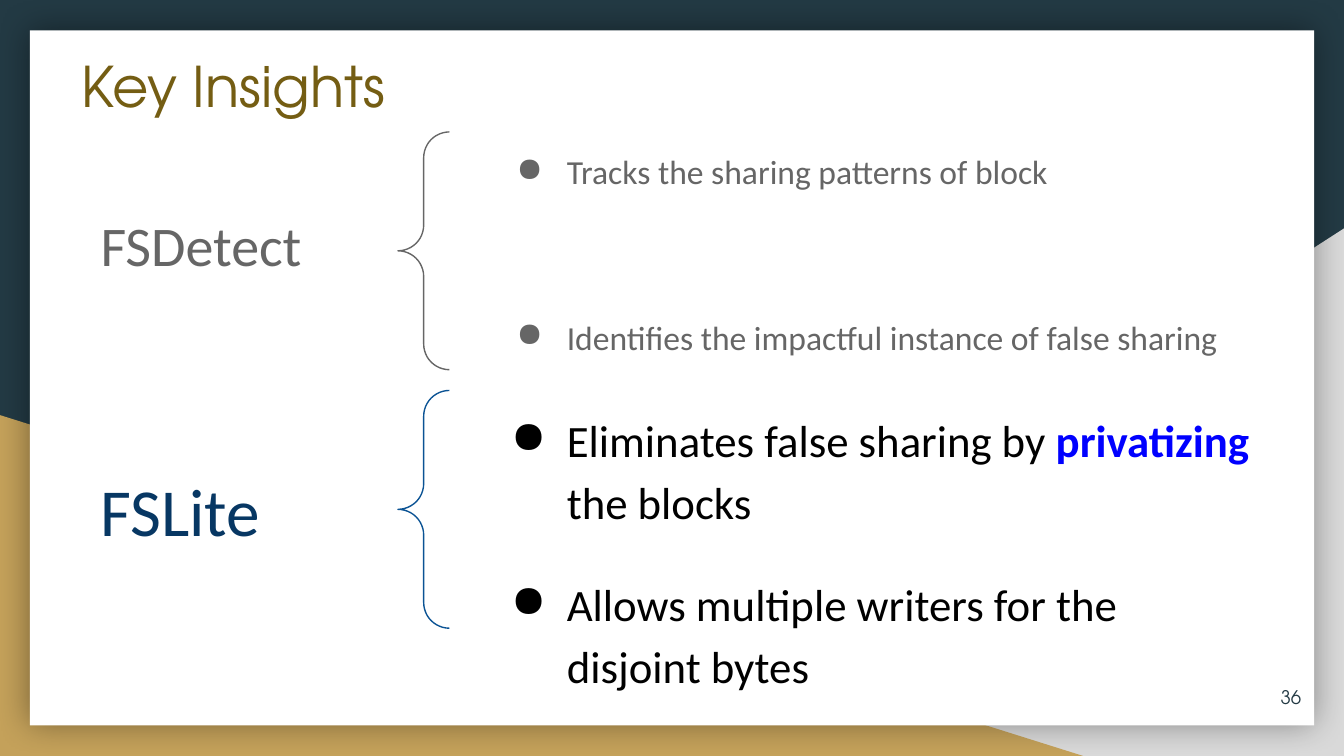
from dataclasses import dataclass

from lxml.etree import SubElement
from pptx import Presentation
from pptx.dml.color import RGBColor
from pptx.enum.shapes import MSO_SHAPE as Preset
from pptx.enum.text import MSO_ANCHOR as Anchor, PP_ALIGN as Align
from pptx.oxml.ns import qn
from pptx.util import Pt


@dataclass(frozen=True)
class Theme:
    """Colours, fonts and type sizes of the slide."""
    backdrop: str = "233A44"
    corner_grey: str = "D9D9D9"
    corner_gold: str = "C4A15A"
    panel: str = "FFFFFF"
    shadow: str = "000000"
    heading: str = "745D13"
    muted: str = "666666"
    ink: str = "000000"
    accent: str = "0000FF"
    lite: str = "073763"
    lite_brace: str = "0B5394"
    heading_font: str = "TeX Gyre Adventor"
    body_font: str = "Calibri"
    lite_size: int = 36
    heading_size: int = 30
    strong_size: int = 24
    muted_size: int = 18
    number_size: int = 10


THEME = Theme()


def rgb(color):
    """Turn a hex string into a colour."""
    return RGBColor.from_string(color)


def add_preset(slide, preset, box, fill=None, line=None):
    """Add a flat preset shape with an optional fill and outline."""
    shape = slide.shapes.add_shape(preset, *map(Pt, box))
    shape.shadow.inherit = False
    if fill:
        shape.fill.solid()
        shape.fill.fore_color.rgb = rgb(fill)
    else:
        shape.fill.background()
    if line:
        shape.line.color.rgb = rgb(line)
        shape.line.width = Pt(0.75)
    else:
        shape.line.fill.background()
    return shape


def add_glow_shadow(shape):
    """Give a shape a soft centred shadow."""
    effects = shape._element.spPr.find(qn("a:effectLst"))
    shadow = SubElement(effects, qn("a:outerShdw"), blurRad=str(Pt(18)),
                        dist="0", dir="0", algn="ctr", rotWithShape="0")
    color = SubElement(shadow, qn("a:srgbClr"), val=THEME.shadow)
    SubElement(color, qn("a:alpha"), val="40000")


def add_text(slide, box, runs, size, font=THEME.body_font):
    """Add a text box from (text, colour, bold) runs and return its frame."""
    frame = slide.shapes.add_textbox(*map(Pt, box)).text_frame
    frame.word_wrap = True
    frame.margin_left = frame.margin_right = Pt(7.2)
    frame.margin_top = frame.margin_bottom = Pt(7.2)
    for text, color, bold in runs:
        run = frame.paragraphs[0].add_run()
        run.text = text
        run.font.name = font
        run.font.size = Pt(size)
        run.font.bold = bold
        run.font.color.rgb = rgb(color)
    return frame


def add_bullet(slide, box, runs, size):
    """Add a one-paragraph bullet point with a hanging indent."""
    frame = add_text(slide, box, runs, size)
    paragraph = frame.paragraphs[0]
    paragraph.line_spacing = 1.15
    properties = paragraph._p.get_or_add_pPr()
    properties.set("marL", str(Pt(36)))
    properties.set("indent", str(-Pt(18 + size / 2)))
    bullet_color = SubElement(properties, qn("a:buClr"))
    SubElement(bullet_color, qn("a:srgbClr"), val=runs[0][1])
    SubElement(properties, qn("a:buChar"), char="●")
    return frame


def add_brace(slide, top, color):
    """Add the brace that joins a technique to its insights."""
    brace = add_preset(slide, Preset.LEFT_BRACE, (213.2, top, 27.6, 127.4), line=color)
    brace.adjustments[0] = 0.5
    brace.adjustments[1] = 0.5


def add_backdrop(slide):
    """Paint the background, corner triangles and white panel."""
    slide.background.fill.solid()
    slide.background.fill.fore_color.rgb = rgb(THEME.backdrop)
    grey_corner = add_preset(slide, Preset.RIGHT_TRIANGLE, (282.2, 122.4, 437.8, 282.6), THEME.corner_grey)
    grey_corner._element.spPr.find(qn("a:xfrm")).set("flipH", "1")
    add_preset(slide, Preset.RIGHT_TRIANGLE, (0, 222.4, 580.3, 182.6), THEME.corner_gold)
    panel = add_preset(slide, Preset.RECTANGLE, (16, 16.2, 688, 372.4), THEME.panel)
    add_glow_shadow(panel)


def main():
    """Build and save the slide."""
    deck = Presentation()
    deck.slide_width, deck.slide_height = Pt(720), Pt(405)
    slide = deck.slides.add_slide(deck.slide_layouts[6])
    add_backdrop(slide)

    add_text(slide, (36.7, 20.2, 574.6, 51.1), [("Key Insights", THEME.heading, False)],
             THEME.heading_size, THEME.heading_font)
    page_number = add_text(slide, (661, 357.8, 43.2, 31), [("36", THEME.backdrop, False)],
                           THEME.number_size, THEME.heading_font)
    page_number.vertical_anchor = Anchor.MIDDLE
    page_number.paragraphs[0].alignment = Align.RIGHT

    techniques = [
        ("FSDetect", (46.8, 105.8, 146.9, 51.1), THEME.heading_size, THEME.muted, 70.7, THEME.muted),
        ("FSLite", (46.8, 244.1, 107.3, 58.3), THEME.lite_size, THEME.lite, 209.2, THEME.lite_brace),
    ]
    for technique, box, size, color, brace_top, brace_color in techniques:
        add_text(slide, box, [(technique, color, False)], size)
        add_brace(slide, brace_top, brace_color)

    insights = [
        (70.6, 400.3, 36, THEME.muted_size,
         [("Tracks the sharing patterns of block", THEME.muted, False)]),
        (159.1, 410.4, 36, THEME.muted_size,
         [("Identifies the impactful instance of false sharing", THEME.muted, False)]),
        (209.5, 417.6, 77, THEME.strong_size,
         [("Eliminates false sharing by", THEME.ink, False),
          (" privatizing ", THEME.accent, True),
          ("the blocks", THEME.ink, False)]),
        (297.4, 407.5, 77, THEME.strong_size,
         [("Allows multiple writers for the disjoint bytes", THEME.ink, False)]),
    ]
    for top, width, height, size, runs in insights:
        add_bullet(slide, (260.6, top, width, height), runs, size)

    deck.save("out.pptx")


if __name__ == "__main__":
    main()
